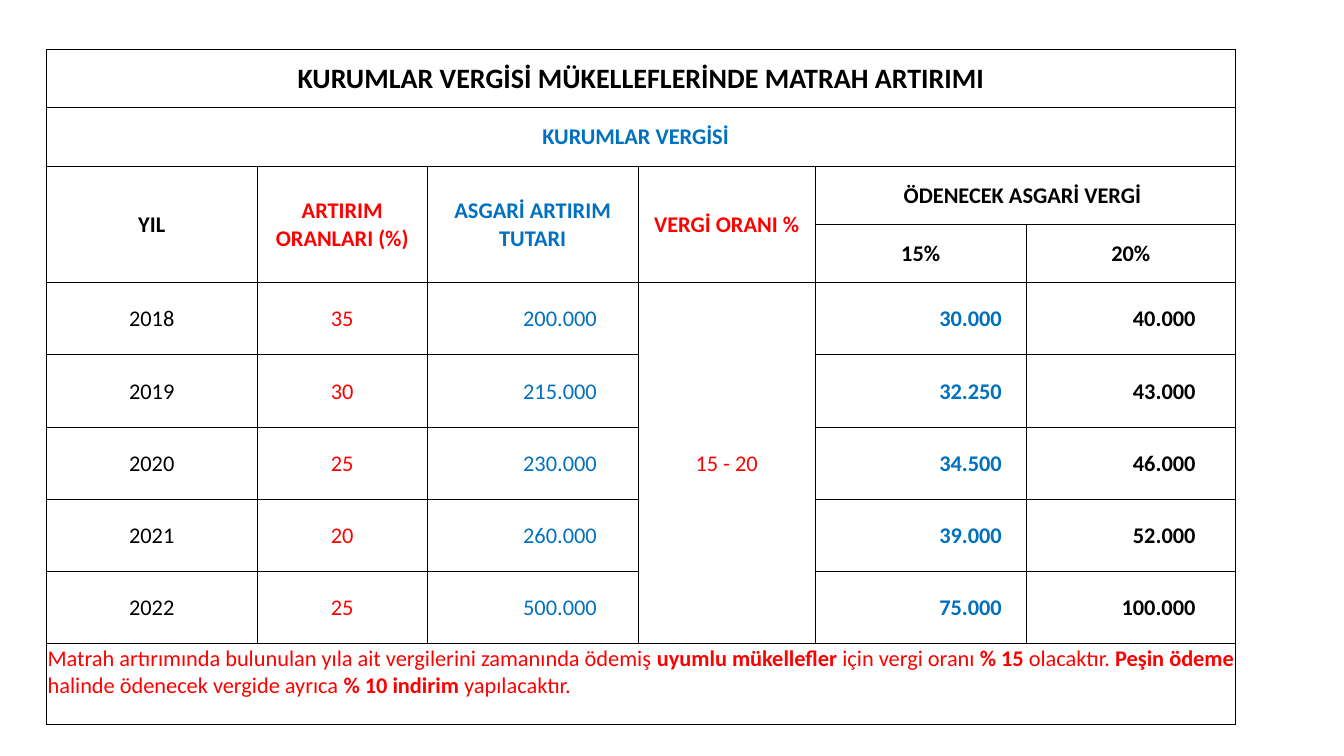
from lxml import etree
from pptx import Presentation, util as u
from pptx.dml.color import RGBColor
from pptx.enum import text
from pptx.oxml import ns

COLORS = {"black": "000000", "red": "FF0000", "blue": "0070C0"}
CENTER, RIGHT, LEFT = text.PP_ALIGN.CENTER, text.PP_ALIGN.RIGHT, text.PP_ALIGN.LEFT
PLAIN_STYLE = "{2D5ABB26-0587-4C30-8999-92F81FD0307C}"


class TaxSlide:
    """Holds the type style, the page and its table."""

    font, size, inset = "Calibri", 16, 0.03
    inner_line, outer_line = 0.5, 1

    def __init__(self, deck):
        self.page = deck.slides.add_slide(deck.slide_layouts[6])

    def add_table(self, left, top, widths, heights):
        frame = self.page.shapes.add_table(
            len(heights), len(widths), u.Cm(left), u.Cm(top),
            u.Cm(sum(widths)), u.Cm(sum(heights)))
        self.table = frame.table
        self.table.first_row = self.table.horz_banding = False
        self.table._tbl.tblPr.find(ns.qn("a:tableStyleId")).text = PLAIN_STYLE
        for column, width in zip(self.table.columns, widths):
            column.width = u.Cm(width)
        for row, height in zip(self.table.rows, heights):
            row.height = u.Cm(height)

    def add_cell(self, row, col, spans, color="black", align=CENTER, size=None,
                 rows=1, cols=1, indent=inset, anchor=text.MSO_ANCHOR.MIDDLE):
        """Fill a cell with (words, bold) spans, merging rows x cols."""
        cell = self.table.cell(row, col)
        if rows * cols > 1:
            cell.merge(self.table.cell(row + rows - 1, col + cols - 1))
        cell.margin_left = cell.margin_top = u.Cm(self.inset)
        cell.margin_right, cell.margin_bottom = u.Cm(indent), 0
        cell.vertical_anchor = anchor
        para = cell.text_frame.paragraphs[0]
        para.alignment = align
        for words, bold in spans:
            span = para.add_run()
            span.text = words
            span.font.name, span.font.bold = self.font, bold
            span.font.size = u.Pt(size or self.size)
            span.font.color.rgb = RGBColor.from_string(COLORS[color])
        self.add_borders(cell, {
            "L": col == 0,
            "R": col + cols == len(self.table.columns),
            "T": row == 0,
            "B": row + rows == len(self.table.rows)})
        cell.fill.background()

    def add_borders(self, cell, outer_sides):
        """Draw all four sides, heavier on the outside of the table."""
        for side, is_outer in outer_sides.items():
            width = u.Pt(self.outer_line if is_outer else self.inner_line)
            line = etree.SubElement(cell._tc.get_or_add_tcPr(), ns.qn("a:ln" + side),
                                    w=str(int(width)))
            fill = etree.SubElement(line, ns.qn("a:solidFill"))
            etree.SubElement(fill, ns.qn("a:srgbClr"), val=COLORS["black"])


def main():
    deck = Presentation()
    deck.slide_width, deck.slide_height = u.Cm(33.87), u.Cm(19.05)
    slide = TaxSlide(deck)
    slide.add_table(1.17, 1.24, [5.31, 4.29, 5.31, 4.47, 5.31, 5.28],
                    [1.47] * 4 + [1.82] * 5 + [2.03])

    # Headings across the table
    slide.add_cell(0, 0, [("KURUMLAR VERGİSİ MÜKELLEFLERİNDE MATRAH ARTIRIMI", True)],
                   size=20, cols=6)
    slide.add_cell(1, 0, [("KURUMLAR VERGİSİ", True)], "blue", cols=6, indent=0.3)

    # Column headings
    headings = [("YIL", "black"), ("ARTIRIM ORANLARI (%)", "red"),
                ("ASGARİ ARTIRIM TUTARI", "blue"), ("VERGİ ORANI %", "red")]
    for col, (heading, color) in enumerate(headings):
        slide.add_cell(2, col, [(heading, True)], color, rows=2)
    slide.add_cell(2, 4, [("ÖDENECEK ASGARİ VERGİ", True)], cols=2, indent=0.18)
    for col, rate in enumerate(["15%", "20%"], 4):
        slide.add_cell(3, col, [(rate, True)])

    # Yearly figures: column, colour, alignment, bold, right indent
    formats = [(0, "black", CENTER, False, 0.03), (1, "red", CENTER, False, 0.03),
               (2, "blue", RIGHT, False, 1.04), (4, "blue", RIGHT, True, 0.61),
               (5, "black", RIGHT, True, 1.01)]
    years = [("2018", "35", "200.000", "30.000", "40.000"),
             ("2019", "30", "215.000", "32.250", "43.000"),
             ("2020", "25", "230.000", "34.500", "46.000"),
             ("2021", "20", "260.000", "39.000", "52.000"),
             ("2022", "25", "500.000", "75.000", "100.000")]
    for row, figures in enumerate(years, 4):
        for figure, (col, color, align, bold, indent) in zip(figures, formats):
            slide.add_cell(row, col, [(figure, bold)], color, align, indent=indent)
    slide.add_cell(4, 3, [("15 - 20", False)], "red", rows=len(years))

    # Note below the figures
    note = [("Matrah artırımında bulunulan yıla ait vergilerini zamanında ödemiş ", False),
            ("uyumlu mükellefler", True), (" için vergi oranı ", False),
            ("% 15 ", True), ("olacaktır. ", False), ("Peşin ödeme", True),
            (" halinde ödenecek vergide ayrıca ", False),
            ("% 10 indirim", True), (" yapılacaktır.", False)]
    slide.add_cell(9, 0, note, "red", LEFT, cols=6, anchor=text.MSO_ANCHOR.TOP)

    deck.save("out.pptx")


if __name__ == "__main__":
    main()
